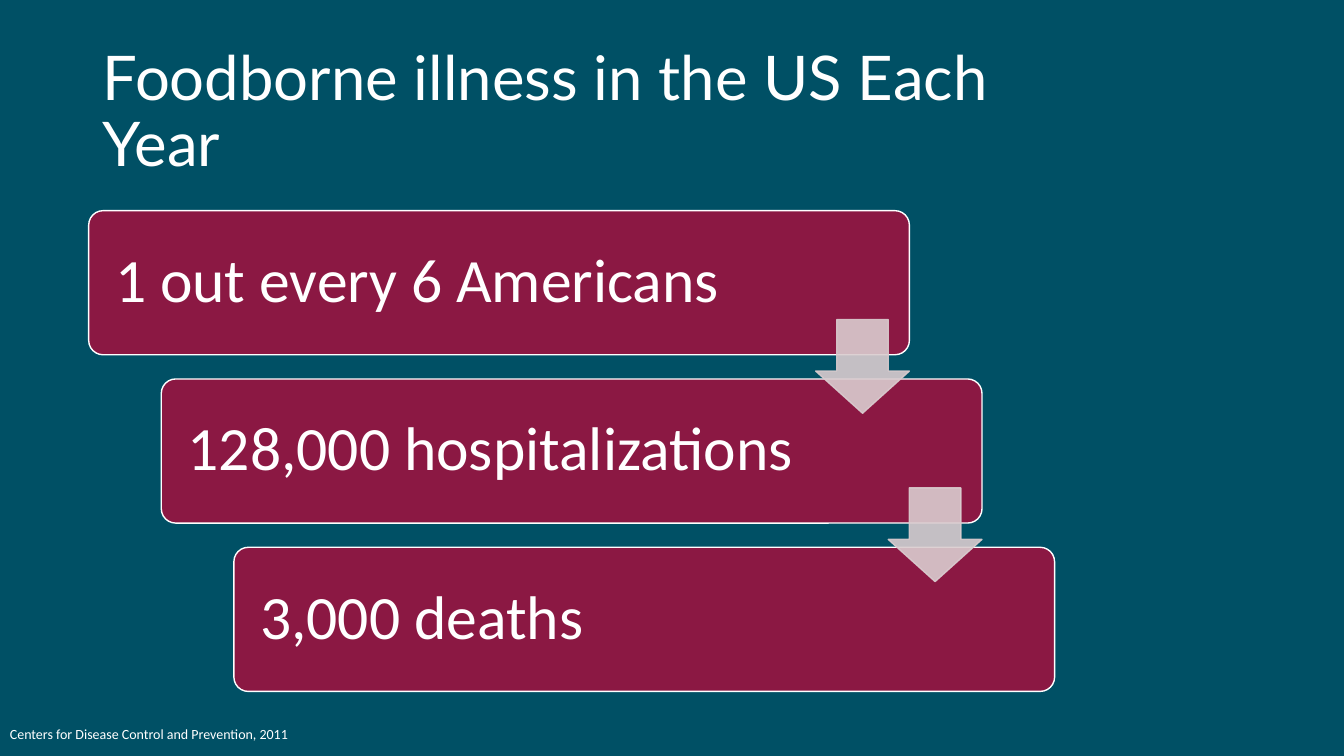
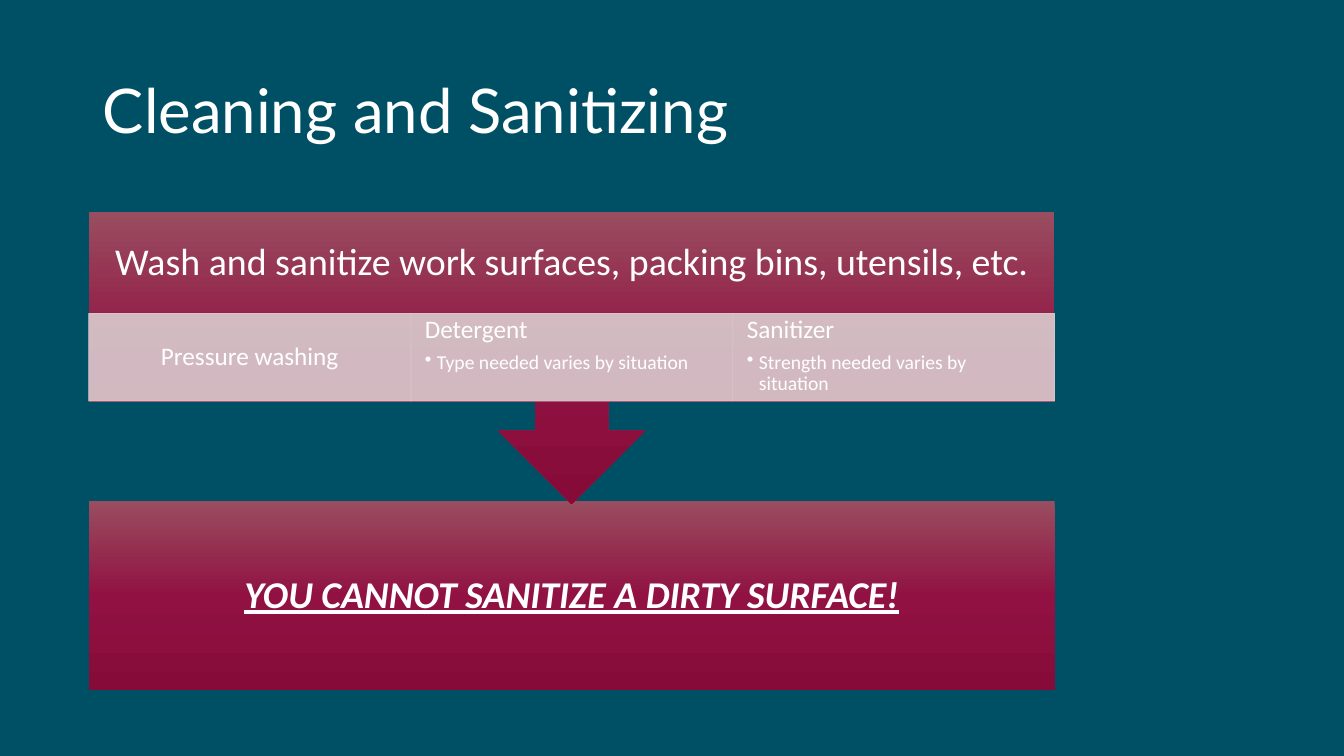
from dataclasses import dataclass

from lxml import etree
from pptx import Presentation
from pptx import util as u
from pptx.dml.color import RGBColor
from pptx.enum import shapes, text
from pptx.oxml import ns

Inches, Pt = u.Inches, u.Pt
Shape, Anchor, Align = shapes.MSO_SHAPE, text.MSO_ANCHOR, text.PP_ALIGN


@dataclass(frozen=True)
class Theme:
    """Colours, fonts and type sizes shared by the slides."""
    ground: str = "005065"
    ink: str = "FFFFFF"
    step: str = "8B1843"
    pale: str = "DACCCF"
    gradient: tuple = ((0, "994D60"), (50, "911242"), (100, "860B39"))
    title_font: str = "Lato"
    body_font: str = "Calibri"
    title: int = 44
    message: int = 27
    topic: int = 18
    detail: int = 14
    source: int = 10


THEME = Theme()

ILLNESS = {
    "title": "Foodborne illness in the US Each Year",
    "steps": ["1 out every 6 Americans", "128,000 hospitalizations", "3,000 deaths"],
    "source": "Centers for Disease Control and Prevention, 2011",
}
CLEANING = {
    "title": "Cleaning and Sanitizing",
    "task": "Wash and sanitize work surfaces, packing bins, utensils, etc.",
    "topics": [
        ("Pressure washing", None),
        ("Detergent", "Type needed varies by situation"),
        ("Sanitizer", "Strength needed varies by situation"),
    ],
    "warning": "YOU CANNOT SANITIZE A DIRTY SURFACE!",
}


def apply(target, values):
    """Set each named attribute of the target."""
    for name, value in values.items():
        setattr(target, name, value)


def element(parent, tag, **attributes):
    """Append a drawing element to the parent."""
    return etree.SubElement(parent, ns.qn(tag), attributes)


def place(box, left, top, width, height):
    """Move and size a box, in inches."""
    apply(box, {"left": Inches(left), "top": Inches(top),
                "width": Inches(width), "height": Inches(height)})


def set_frame(box, insets=(0.1, 0.05, 0.1, 0.05), anchor=Anchor.MIDDLE):
    """Set the wrapping, anchor and insets of a text frame."""
    names = ("margin_left", "margin_top", "margin_right", "margin_bottom")
    apply(box.text_frame, {"word_wrap": True, "auto_size": text.MSO_AUTO_SIZE.NONE,
                           "vertical_anchor": anchor})
    apply(box.text_frame, {name: Inches(inset) for name, inset in zip(names, insets)})


def write(para, words, size, align=Align.LEFT, spacing=0.9, font=THEME.body_font, **style):
    """Fill a paragraph with one styled run."""
    apply(para, {"alignment": align, "line_spacing": spacing})
    span = para.add_run()
    span.text = words
    apply(span.font, {"name": font, "size": Pt(size), **style})
    span.font.color.rgb = RGBColor.from_string(THEME.ink)


def write_bullet(para, words, size):
    """Fill a paragraph with a hanging bullet."""
    properties = para._p.get_or_add_pPr()
    properties.set("marL", str(Inches(0.12)))
    properties.set("indent", str(-Inches(0.12)))
    element(properties, "a:buChar", char="•")
    write(para, words, size)


def paint(fill, colour):
    """Give a fill one solid colour."""
    fill.solid()
    fill.fore_color.rgb = RGBColor.from_string(colour)


def paint_gradient(box):
    """Give a box the shared vertical gradient."""
    box.fill.gradient()
    box.fill.gradient_angle = 270
    stops = box._element.spPr.find(".//" + ns.qn("a:gsLst"))
    for stop in list(stops):
        stops.remove(stop)
    for percent, colour in THEME.gradient:
        stop = element(stops, "a:gs", pos=str(percent * 1000))
        element(stop, "a:srgbClr", val=colour)


def add_box(page, kind, place_at, fill=None, line=None, weight=1, opacity=100):
    """Add a preset shape; without a fill colour it gets the gradient."""
    box = page.shapes.add_shape(kind, *map(Inches, place_at))
    box.shadow.inherit = False
    if fill:
        paint(box.fill, fill)
    else:
        paint_gradient(box)
    if line:
        paint(box.line.fill, line)
        box.line.width = Pt(weight)
    else:
        box.line.fill.background()
    if opacity < 100:
        for colour in box._element.spPr.iter(ns.qn("a:srgbClr")):
            element(colour, "a:alpha", val=str(opacity * 1000))
    return box


def add_page(deck, title):
    """Add a title-only page with the shared title style."""
    page = deck.slides.add_slide(deck.slide_layouts[5])
    box = page.shapes.title
    place(box, 0.92, 0.4, 9.54, 1.45)
    set_frame(box)
    write(box.text_frame.paragraphs[0], title, THEME.title, font=THEME.title_font)
    return page


def build_illness(deck):
    """Build the staircase of yearly figures."""
    page = add_page(deck, ILLNESS["title"])
    shift, drop = 0.72, 1.67
    for index, words in enumerate(ILLNESS["steps"]):
        box = add_box(page, Shape.ROUNDED_RECTANGLE,
                      (0.88 + index * shift, 2.09 + index * drop, 8.14, 1.43),
                      THEME.step, THEME.ink)
        box.adjustments[0] = 0.1
        set_frame(box, (0.22, 0.18, 0.22, 0.18))
        write(box.text_frame.paragraphs[0], words, THEME.title)
    for index in range(len(ILLNESS["steps"]) - 1):
        arrow = add_box(page, Shape.DOWN_ARROW,
                        (8.09 + index * shift, 3.17 + index * drop, 0.93, 0.93),
                        THEME.pale, THEME.pale, opacity=90)
        arrow.adjustments[0], arrow.adjustments[1] = 0.55, 0.45
    source = page.shapes.add_textbox(*map(Inches, (0, 7.15, 3.24, 0.27)))
    set_frame(source, anchor=Anchor.TOP)
    write(source.text_frame.paragraphs[0], ILLNESS["source"], THEME.source, spacing=1.0)


def build_cleaning(deck):
    """Build the cleaning task, its topics and the warning."""
    page = add_page(deck, CLEANING["title"])
    left, width, inset = 0.88, 9.58, 0.21
    warning = add_box(page, Shape.RECTANGLE, (left, 4.97, width, 1.88))
    set_frame(warning, (inset,) * 4)
    write(warning.text_frame.paragraphs[0], CLEANING["warning"], THEME.message,
          Align.CENTER, bold=True, italic=True, underline=True)

    task = add_box(page, Shape.DOWN_ARROW_CALLOUT, (left, 2.1, width, 2.9))
    set_frame(task, (inset, inset, inset, inset + 0.86))
    write(task.text_frame.paragraphs[0], CLEANING["task"], THEME.message, Align.CENTER)

    cell_width = width / len(CLEANING["topics"])
    for index, (topic, detail) in enumerate(CLEANING["topics"]):
        cell = add_box(page, Shape.RECTANGLE,
                       (left + index * cell_width, 3.11, cell_width, 0.87),
                       THEME.pale, THEME.pale, 0.5, 90)
        set_frame(cell, (0.14, 0.03, 0.14, 0.03), Anchor.TOP if detail else Anchor.MIDDLE)
        para = cell.text_frame.paragraphs[0]
        write(para, topic, THEME.topic, Align.LEFT if detail else Align.CENTER)
        if detail:
            para.space_after = Pt(6)
            write_bullet(cell.text_frame.add_paragraph(), detail, THEME.detail)


def main():
    """Build and save the deck."""
    deck = Presentation()
    apply(deck, {"slide_width": Inches(13.33), "slide_height": Inches(7.5)})
    paint(deck.slide_master.background.fill, THEME.ground)
    build_illness(deck)
    build_cleaning(deck)
    deck.save("out.pptx")


if __name__ == "__main__":
    main()
